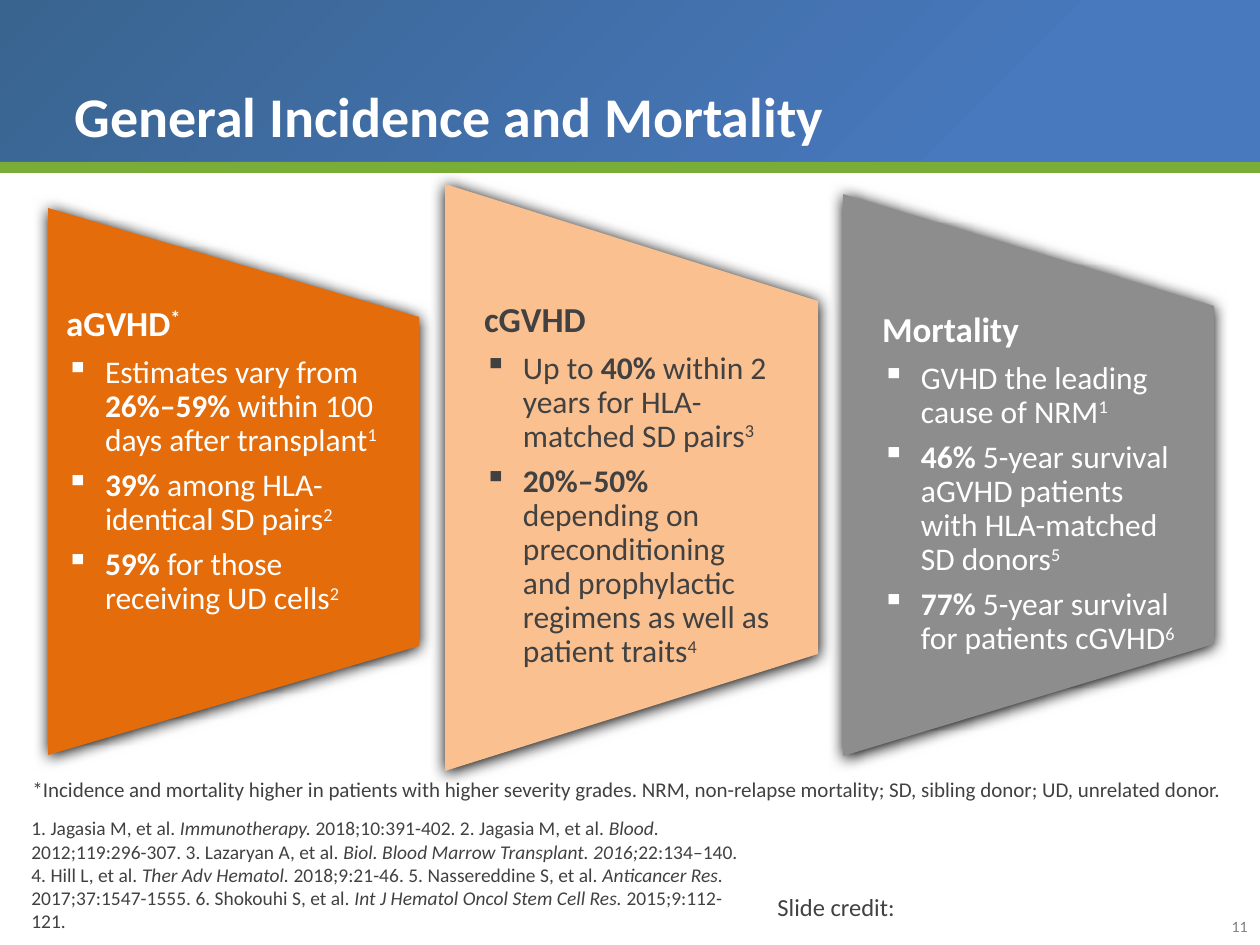
from lxml.etree import SubElement
from pptx import Presentation
from pptx.dml.color import RGBColor
from pptx.enum.shapes import MSO_SHAPE as Shape
from pptx.enum.text import MSO_ANCHOR as Anchor, PP_ALIGN as Align
from pptx.oxml import parse_xml
from pptx.oxml.ns import nsdecls, qn
from pptx.util import Emu, Pt

PX = 914400 / 126
WHITE = RGBColor(0xFF, 0xFF, 0xFF)
DARK = RGBColor(0x41, 0x41, 0x41)
GRAY = RGBColor(0x7F, 0x7F, 0x7F)
GREEN = RGBColor(0x79, 0xAD, 0x38)
ORANGE = RGBColor(0xE4, 0x6C, 0x0A)
PEACH = RGBColor(0xFA, 0xC0, 0x90)
SILVER = RGBColor(0x8D, 0x8D, 0x8D)


def add_runs(paragraph, runs, size, color):
    """Each run is (text, marks): b bold, i italic, ^ superscript."""
    for text, marks in runs:
        run = paragraph.add_run()
        run.text = text
        run.font.name = "Calibri"
        run.font.size = Pt(size)
        run.font.color.rgb = color
        run.font.bold = "b" in marks
        run.font.italic = "i" in marks
        if "^" in marks:
            run._r.get_or_add_rPr().set("baseline", "30000")


def add_text(box, runs, size, color, align=Align.LEFT, anchor=Anchor.TOP, wrap=True):
    left, top, width, height = [Emu(round(n * PX)) for n in box]
    frame = slide.shapes.add_textbox(left, top, width, height).text_frame
    frame.word_wrap = wrap
    frame.vertical_anchor = anchor
    paragraph = frame.paragraphs[0]
    paragraph.alignment = align
    add_runs(paragraph, runs, size, color)
    return paragraph


presentation = Presentation()
presentation.slide_width = Emu(round(1260 * PX))
presentation.slide_height = Emu(round(945 * PX))
slide = presentation.slides.add_slide(presentation.slide_layouts[6])

# Header band and green rule
for top, height in ((0, 173), (162, 11)):
    band = slide.shapes.add_shape(
        Shape.RECTANGLE, 0, Emu(round(top * PX)),
        presentation.slide_width, Emu(round(height * PX)))
    band.shadow.inherit = False
    band.line.fill.background()
    if top:
        band.fill.solid()
        band.fill.fore_color.rgb = GREEN
    else:
        band._element.spPr.find(qn("a:prstGeom")).addnext(parse_xml(
            f'<a:gradFill {nsdecls("a")}><a:gsLst>'
            '<a:gs pos="0"><a:srgbClr val="396490"/></a:gs>'
            '<a:gs pos="79000"><a:srgbClr val="4878BD"/></a:gs></a:gsLst>'
            '<a:path path="circle"><a:fillToRect r="100000" b="100000"/></a:path>'
            '</a:gradFill>'))

# Title, slide number and credit
title = add_text((62, 15, 1135, 141), [("General Incidence and Mortality", "b")],
                 32, WHITE, anchor=Anchor.BOTTOM)
title.line_spacing = 0.9
add_text((1207, 911, 53, 32), [("11", "")], 9, GRAY, align=Align.RIGHT)
add_text((765, 886, 144, 43), [("Slide credit:", "")], 14, DARK, wrap=False)

# References
add_text((19, 835, 746, 104), [
    ("1. Jagasia M, et al. ", ""), ("Immunotherapy.", "i"),
    (" 2018;10:391-402. 2. Jagasia M, et al. ", ""), ("Blood. ", "i"),
    ("2012;119:296-307. 3. Lazaryan A, et al. ", ""),
    ("Biol. Blood Marrow Transplant. 2016;", "i"),
    ("22:134–140. 4. Hill L, et al. ", ""), ("Ther Adv Hematol. ", "i"),
    ("2018;9:21-46. 5. Nassereddine S, et al. ", ""), ("Anticancer Res.", "i"),
    (" 2017;37:1547-1555. 6. Shokouhi S, et al. ", ""),
    ("Int J Hematol Oncol Stem Cell Res. ", "i"), ("2015;9:112-121.", ""),
], 11.1, DARK, anchor=Anchor.BOTTOM)

# Panels: left, top, width, height, side inset, top inset, fill, text color, paragraphs
panels = [
    (48, 208, 371, 547, 18, 98, ORANGE, WHITE, [
        [("aGVHD", "b"), ("*", "b^")],
        [("Estimates vary from ", ""), ("26%–59% ", "b"),
         ("within 100 days after transplant", ""), ("1", "^")],
        [("39% ", "b"), ("among HLA-identical SD pairs", ""), ("2", "^")],
        [("59% ", "b"), ("for those receiving UD cells", ""), ("2", "^")],
    ]),
    (445, 184, 373, 587, 39, 118, PEACH, DARK, [
        [("cGVHD", "b")],
        [("Up to ", ""), ("40% ", "b"),
         ("within 2 years for HLA-matched SD pairs", ""), ("3", "^")],
        [("20%–50% ", "b"),
         ("depending on preconditioning and prophylactic regimens "
          "as well as patient traits", ""), ("4", "^")],
    ]),
    (843, 194, 371, 562, 39, 118, SILVER, WHITE, [
        [("Mortality", "b")],
        [("GVHD the leading cause of NRM", ""), ("1", "^")],
        [("46% ", "b"),
         ("5-year survival aGVHD patients with HLA-matched SD donors", ""), ("5", "^")],
        [("77% ", "b"), ("5-year survival for patients cGVHD", ""), ("6", "^")],
    ]),
]
for left, top, width, height, side, inset, fill, color, paragraphs in panels:
    # The right edge is shortened by a fifth of the height at both ends
    right, bottom, slope = left + width, top + height, round(height / 5)
    builder = slide.shapes.build_freeform(left, bottom, scale=PX)
    builder.add_line_segments(
        [(left, top), (right, top + slope), (right, bottom - slope)], close=True)
    panel = builder.convert_to_shape()
    panel.fill.solid()
    panel.fill.fore_color.rgb = fill
    panel.line.fill.background()
    panel.shadow.inherit = False
    effects = panel._element.spPr.find(qn("a:effectLst"))
    shadow = SubElement(effects, qn("a:outerShdw"), blurRad=str(Pt(8.5)),
                        dist=str(Pt(1)), dir="5400000", rotWithShape="0")
    SubElement(shadow, qn("a:srgbClr"), val="000000")

    frame = panel.text_frame
    frame.word_wrap = True
    frame.vertical_anchor = Anchor.TOP
    frame.margin_left = frame.margin_right = Emu(round(side * PX))
    frame.margin_top = Emu(round(inset * PX))
    frame.margin_bottom = 0
    for index, runs in enumerate(paragraphs):
        paragraph = frame.add_paragraph() if index else frame.paragraphs[0]
        size = 18 if index else 20
        paragraph.alignment = Align.LEFT
        paragraph.line_spacing = 0.9
        paragraph.space_after = Pt(size * 0.35)
        if index:
            properties = paragraph._p.get_or_add_pPr()
            indent = round(39 * PX)
            properties.set("marL", str(indent))
            properties.set("indent", str(-indent))
            SubElement(properties, qn("a:buChar"), char="▪")
        add_runs(paragraph, runs, size, color)

# Footnote
add_text((20, 770, 1215, 38), [
    ("*Incidence and mortality higher in patients with higher severity grades. "
     "NRM, non-relapse mortality; SD, sibling donor; UD, unrelated donor.", ""),
], 12, DARK)

presentation.save("out.pptx")
